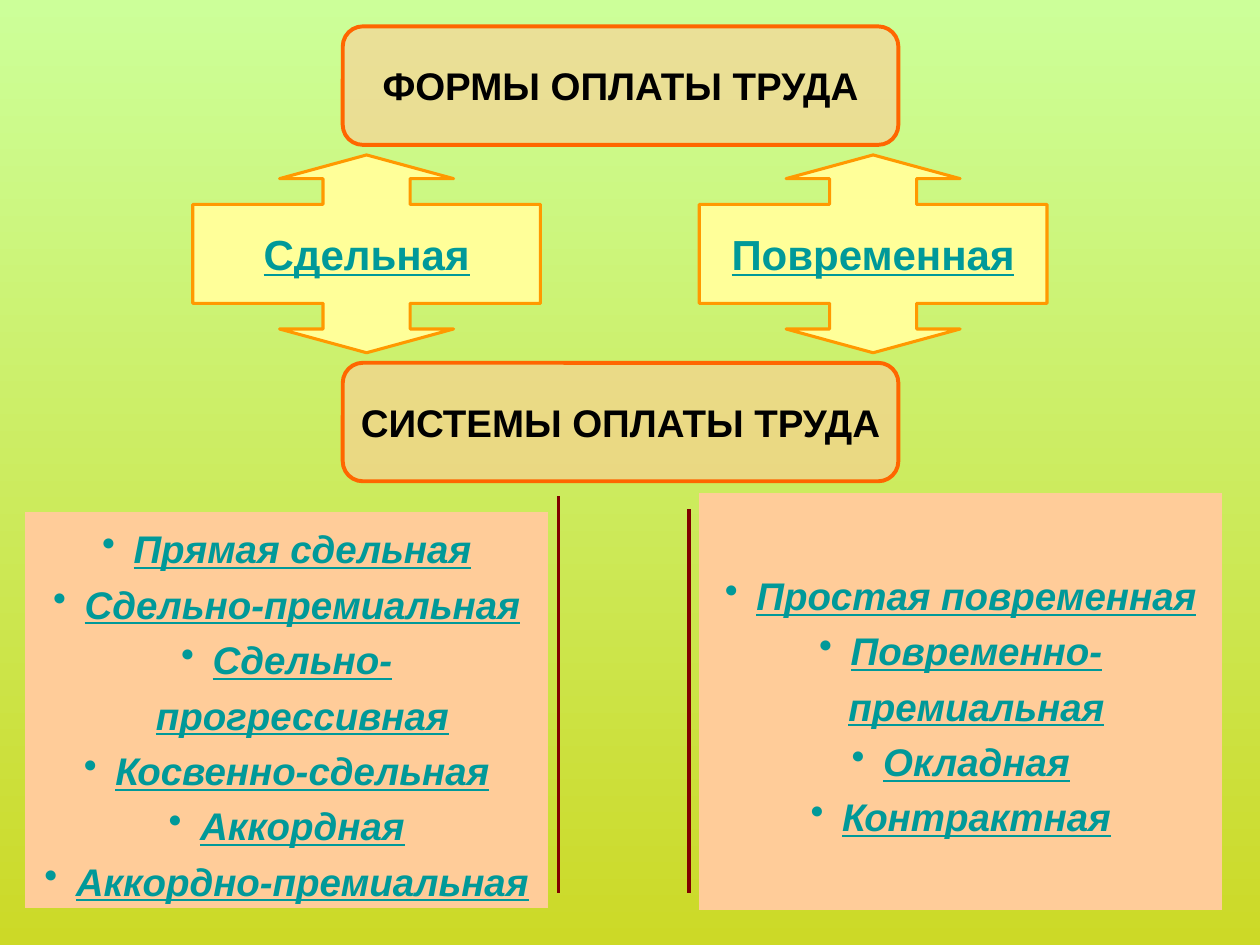
"""Build a slide on the forms and systems of pay."""
from lxml import etree
from pptx import Presentation
from pptx.dml.color import RGBColor
from pptx.enum import shapes, text
from pptx.oxml import ns
from pptx.util import Pt

THEME = {
    "font": "Arial",
    "sky": "CCFF99", "grass": "CCD927",
    "peach": "FFCC99", "orange": "FF6600",
    "yellow": "FFFF99", "amber": "FF9900",
    "maroon": "800000", "black": "000000", "teal": "009999",
    "body_size": 22, "arrow_size": 24,
}

presentation = Presentation()
presentation.slide_width = Pt(720)
presentation.slide_height = Pt(540)
column = presentation.slide_width / 100
row = presentation.slide_height / 75
slide = presentation.slides.add_slide(presentation.slide_layouts[6])


def color(name):
    return RGBColor.from_string(THEME[name])


def add_box(kind, place, adjustments, fill, line, line_width, lines, size, ink):
    left, top, width, height = place
    shape = slide.shapes.add_shape(
        kind, round(left * column), round(top * row), round(width * column), round(height * row))
    for index, value in enumerate(adjustments):
        shape.adjustments[index] = value
    shape.shadow.inherit = False
    shape.fill.solid()
    shape.fill.fore_color.rgb = color(fill)
    shape.line.color.rgb = color(line)
    shape.line.width = Pt(line_width)
    frame = shape.text_frame
    frame.vertical_anchor = text.MSO_ANCHOR.MIDDLE
    frame.word_wrap = len(lines) > 1
    frame.text = "\n".join(lines)
    for paragraph in frame.paragraphs:
        paragraph.alignment = text.PP_ALIGN.CENTER
        paragraph.font.name = THEME["font"]
        paragraph.font.size = Pt(THEME[size])
        paragraph.font.bold = True
        paragraph.font.underline = ink == "teal"
        paragraph.font.color.rgb = color(ink)
    return shape


background = slide.background.fill
background.gradient()
background.gradient_angle = 270
for stop, name in zip(background.gradient_stops, ("sky", "grass")):
    stop.color.rgb = color(name)

for top, title in ((2.1, "ФОРМЫ ОПЛАТЫ ТРУДА"), (28.8, "СИСТЕМЫ ОПЛАТЫ ТРУДА")):
    shape = add_box(shapes.MSO_SHAPE.ROUNDED_RECTANGLE, (27.2, top, 44.1, 9.4), (0.17,),
                    "peach", "orange", 2.25, (title,), "body_size", "black")
    tint = shape.fill._xPr.find(ns.qn("a:solidFill"))[0]
    etree.SubElement(tint, ns.qn("a:alpha"), val="60000")

for left, form in ((15.3, "Сдельная"), (55.5, "Повременная")):
    add_box(shapes.MSO_SHAPE.UP_DOWN_ARROW_CALLOUT, (left, 12.3, 27.6, 15.7),
            (0.44, 0.44, 0.12, 0.5), "yellow", "amber", 1.75, (form,), "arrow_size", "teal")

systems = (
    ((2, 40.6, 41.5, 31.5), (0.96, 1.02, -0.04, 1.02), False,
     ("Прямая сдельная", "Сдельно-премиальная", "Сдельно-прогрессивная",
      "Косвенно-сдельная", "Аккордная", "Аккордно-премиальная")),
    ((55.5, 39.1, 41.5, 33.1), (0.04, 1.02, 0.96, 1.02), True,
     ("Простая повременная", "Повременно-премиальная", "Окладная", "Контрактная")),
)
for place, adjustments, flipped, names in systems:
    shape = add_box(shapes.MSO_SHAPE.LINE_CALLOUT_1_NO_BORDER, place, adjustments,
                    "peach", "maroon", 2, names, "body_size", "teal")
    if flipped:
        shape._element.spPr.find(ns.qn("a:xfrm")).set("flipH", "1")
    for paragraph in shape.text_frame.paragraphs:
        paragraph.line_spacing = 1.2
        paragraph.font.italic = True
        properties = paragraph._p.get_or_add_pPr()
        properties.set("marL", str(Pt(18)))
        properties.set("indent", str(-Pt(18)))
        bullet = etree.Element(ns.qn("a:buChar"), char="•")
        properties.find(ns.qn("a:defRPr")).addprevious(bullet)

presentation.save("out.pptx")
